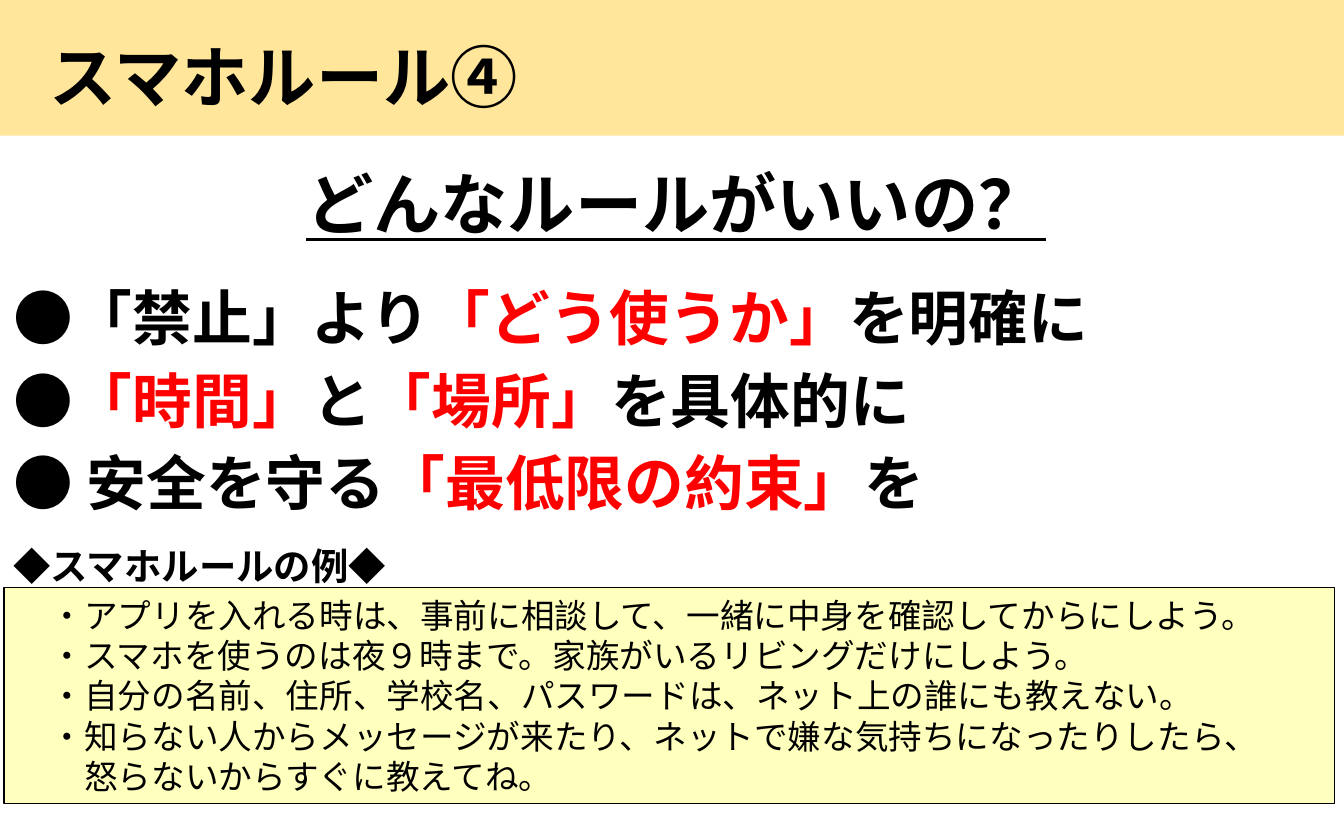
from dataclasses import dataclass

from lxml import etree
from pptx import Presentation
from pptx.dml.color import RGBColor
from pptx.enum.shapes import MSO_SHAPE
from pptx.enum.text import MSO_ANCHOR, PP_ALIGN
from pptx.oxml.ns import qn
from pptx.util import Inches, Pt

RECT = MSO_SHAPE.RECTANGLE
TOP, MIDDLE = MSO_ANCHOR.TOP, MSO_ANCHOR.MIDDLE
LEFT, CENTER = PP_ALIGN.LEFT, PP_ALIGN.CENTER
FONT = "Noto Sans CJK JP"
COLORS = {"text": "000000", "accent": "FF0000", "band": "FFE69A", "panel": "FFFFBE"}


@dataclass
class Run:
    text: str
    color: str = "text"


@dataclass
class TextStyle:
    size: float
    bold: bool = True
    underline: bool = False
    align: PP_ALIGN = LEFT
    anchor: MSO_ANCHOR = TOP
    gap: float = 0      # points between paragraphs
    hang: float = 0     # inches, first-line indent and hanging depth


@dataclass
class TextBlock:
    box: tuple[float, float, float, float]
    style: TextStyle
    paragraphs: list[list[Run]]


def rgb(name: str) -> RGBColor:
    return RGBColor.from_string(COLORS[name])


def add_rect(s, box: tuple[float, float, float, float], fill: str, outlined: bool = False):
    sp = s.shapes.add_shape(RECT, *map(Inches, box))
    sp.shadow.inherit = False
    sp.fill.solid()
    sp.fill.fore_color.rgb = rgb(fill)
    if outlined:
        sp.line.color.rgb = rgb("text")
        sp.line.width = Pt(0.75)
    else:
        sp.line.fill.background()
    return sp


def write_text(sp, style: TextStyle, paragraphs: list[list[Run]]) -> None:
    tf = sp.text_frame
    tf.word_wrap = True
    tf.vertical_anchor = style.anchor
    for i, runs in enumerate(paragraphs):
        p = tf.add_paragraph() if i else tf.paragraphs[0]
        p.alignment = style.align
        if i and style.gap:
            p.space_before = Pt(style.gap)
        if style.hang:
            pPr = p._p.get_or_add_pPr()
            pPr.set("marL", str(Inches(2 * style.hang)))
            pPr.set("indent", str(-Inches(style.hang)))
        for run in runs:
            for j, line in enumerate(run.text.split("\n")):
                if j:
                    p.add_line_break()
                r = p.add_run()
                r.text = line
                r.font.size = Pt(style.size)
                r.font.bold = style.bold
                r.font.underline = style.underline
                r.font.color.rgb = rgb(run.color)
                r.font.name = FONT
                # East Asian typeface
                etree.SubElement(r._r.get_or_add_rPr(), qn("a:ea"), typeface=FONT)


def add_text(s, block: TextBlock) -> None:
    sp = s.shapes.add_textbox(*map(Inches, block.box))
    write_text(sp, block.style, block.paragraphs)


EXAMPLES = [
    "・アプリを入れる時は、事前に相談して、一緒に中身を確認してからにしよう。",
    "・スマホを使うのは夜９時まで。家族がいるリビングだけにしよう。",
    "・自分の名前、住所、学校名、パスワードは、ネット上の誰にも教えない。",
    "・知らない人からメッセージが来たり、ネットで嫌な気持ちになったりしたら、\n"
    "怒らないからすぐに教えてね。",
]

POINTS = [
    [Run("●「禁止」より"), Run("「どう使うか」", "accent"), Run("を明確に")],
    [Run("●"), Run("「時間」", "accent"), Run("と"), Run("「場所」", "accent"),
     Run("を具体的に")],
    [Run("● 安全を守る"), Run("「最低限の約束」", "accent"), Run("を")],
]

TEXT_BLOCKS = [
    TextBlock((0.27, 0.21, 9.66, 0.71), TextStyle(36), [[Run("スマホルール④")]]),
    TextBlock((0.2, 1.16, 9.66, 0.71), TextStyle(36, underline=True, align=CENTER),
              [[Run("どんなルールがいいの？")]]),
    TextBlock((0, 2.03, 10, 1.88), TextStyle(32, anchor=MIDDLE, gap=6), POINTS),
    TextBlock((0, 3.99, 9.99, 0.44), TextStyle(20), [[Run("◆スマホルールの例◆")]]),
]


def main() -> None:
    prs = Presentation()
    prs.slide_width, prs.slide_height = Inches(10), Inches(6.25)
    s = prs.slides.add_slide(prs.slide_layouts[6])

    # Title band
    add_rect(s, (-0.04, -0.1, 10.04, 1.11), "band")

    # Example rules panel
    panel = add_rect(s, (0.03, 4.37, 9.9, 1.61), "panel", outlined=True)
    write_text(panel, TextStyle(18, bold=False, anchor=MIDDLE, hang=0.25),
               [[Run(text)] for text in EXAMPLES])

    # Title, question, key points and panel heading
    for block in TEXT_BLOCKS:
        add_text(s, block)

    prs.save("out.pptx")


if __name__ == "__main__":
    main()
